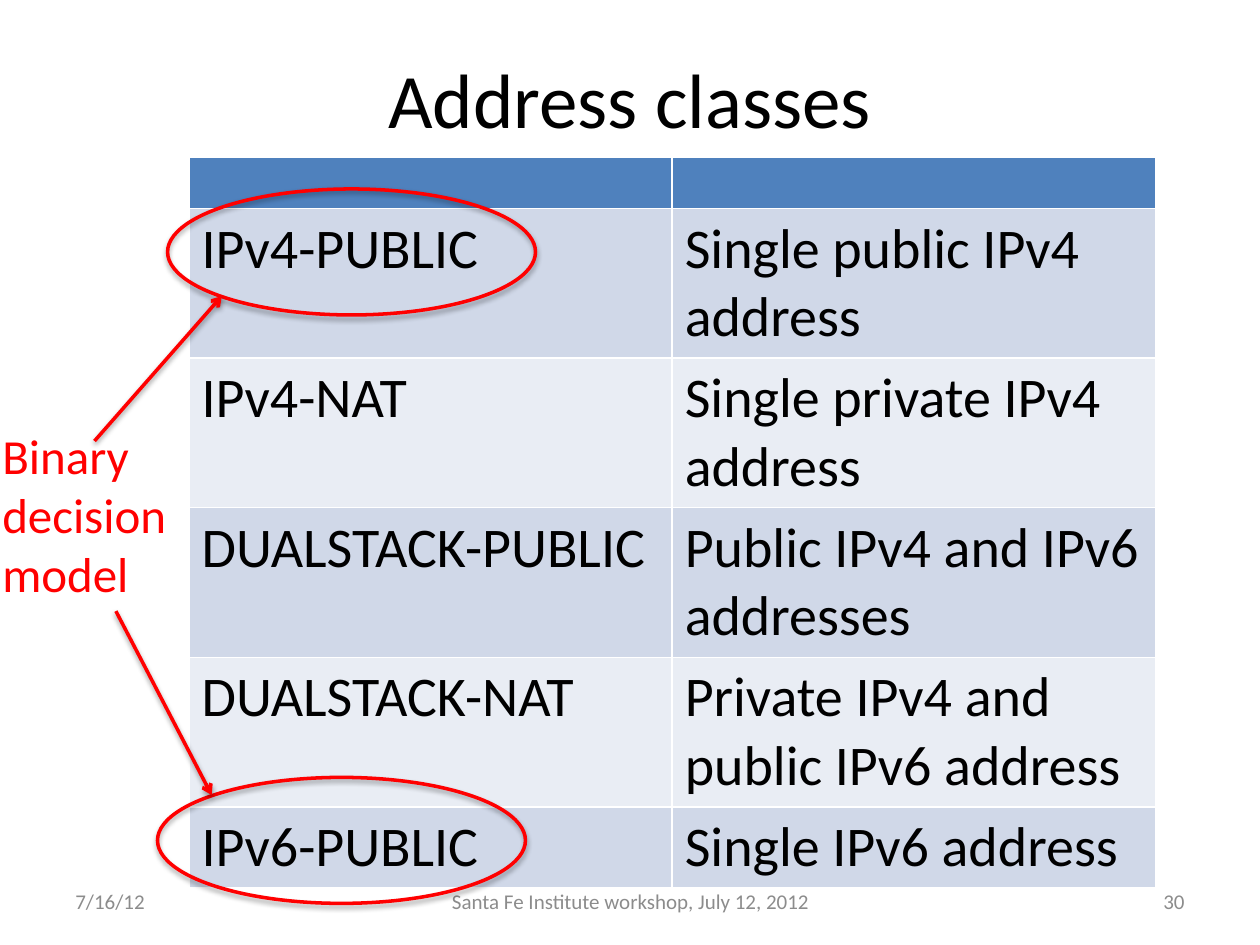
import pptx
import pptx.util
import pptx.dml.color
import pptx.enum.shapes
import pptx.enum.text
import pptx.oxml
import pptx.oxml.ns

Inches, Pt = pptx.util.Inches, pptx.util.Pt
Align, Anchor = pptx.enum.text.PP_ALIGN, pptx.enum.text.MSO_ANCHOR
FONT, RED, GREY, BLACK = "Calibri", "FF0000", "8C8C8C", "000000"
HEAD, BANDS = "4F81BD", ("D0D8E8", "E9EDF4")
ROWS = [
    ("IPv4-PUBLIC", "Single public IPv4 address"),
    ("IPv4-NAT", "Single private IPv4 address"),
    ("DUALSTACK-PUBLIC", "Public IPv4 and IPv6 addresses"),
    ("DUALSTACK-NAT", "Private IPv4 and public IPv6 address"),
    ("IPv6-PUBLIC", "Single IPv6 address"),
]
HEIGHTS = [0.4] + [0.95] * 4 + [0.52]


def color(code):
    return pptx.dml.color.RGBColor.from_string(code)


def place(box):
    return [Inches(n) for n in box]


def write(frame, text, size, code, align=None):
    frame.text = text
    para = frame.paragraphs[0]
    para.alignment = align
    font = para.runs[0].font
    font.name, font.size = FONT, Pt(size)
    font.color.rgb = color(code)


def add_text(slide, box, text, size, code, align=None, anchor=Anchor.TOP):
    frame = slide.shapes.add_textbox(*place(box)).text_frame
    frame.word_wrap = True
    frame.vertical_anchor = anchor
    write(frame, text, size, code, align)


def add_title(slide, box, text):
    title = slide.shapes.title
    title.left, title.top, title.width, title.height = place(box)
    title.text_frame.vertical_anchor = Anchor.MIDDLE
    write(title.text_frame, text, 44, BLACK, Align.CENTER)


def add_grid(slide, box):
    # White rules come from the default table style
    grid = slide.shapes.add_table(len(HEIGHTS), 2, *place(box)).table
    for row, height in zip(grid.rows, HEIGHTS):
        row.height = Inches(height)
    for r, texts in enumerate([("", "")] + ROWS):
        for c, text in enumerate(texts):
            cell = grid.cell(r, c)
            cell.fill.solid()
            cell.fill.fore_color.rgb = color(BANDS[(r - 1) % 2] if r else HEAD)
            if text:
                write(cell.text_frame, text, 32, BLACK)


def add_mark(shape, alpha, dist):
    """Red outline with a soft shadow below."""
    shape.line.color.rgb = color(RED)
    shape.line.width = Pt(2)
    shape._element.spPr.append(pptx.oxml.parse_xml(
        f'<a:effectLst {pptx.oxml.ns.nsdecls("a")}>'
        f'<a:outerShdw blurRad="{Pt(3.1)}" dist="{Pt(dist)}" dir="5400000" rotWithShape="0">'
        f'<a:srgbClr val="{BLACK}"><a:alpha val="{alpha * 1000}"/></a:srgbClr>'
        '</a:outerShdw></a:effectLst>'))


def add_ring(slide, box):
    kind = pptx.enum.shapes.MSO_SHAPE.OVAL
    ring = slide.shapes.add_shape(kind, *place(box))
    ring.fill.background()
    add_mark(ring, 35, 1.8)


def add_arrow(slide, start, end):
    kind = pptx.enum.shapes.MSO_CONNECTOR.STRAIGHT
    arrow = slide.shapes.add_connector(kind, *place(start + end))
    add_mark(arrow, 38, 1.6)
    arrow.line._get_or_add_ln().append(pptx.oxml.parse_xml(
        f'<a:tailEnd {pptx.oxml.ns.nsdecls("a")} type="arrow"/>'))


def add_notes(slide, box):
    # Label with one arrow to each ringed class
    add_ring(slide, (1.33, 1.5, 2.92, 1))
    add_ring(slide, (1.25, 6.17, 2.92, 1))
    add_arrow(slide, (0.75, 3.5), (1.76, 2.35))
    add_arrow(slide, (0.92, 4.85), (1.68, 6.31))
    add_text(slide, box, "Binary decision model", 28, RED)


def add_footer(slide, top, height):
    parts = [
        (0.5, 2.33, "7/16/12", Align.LEFT),
        (3.42, 3.17, "Santa Fe Institute workshop, July 12, 2012", Align.CENTER),
        (7.17, 2.33, "30", Align.RIGHT),
    ]
    for left, width, text, align in parts:
        add_text(slide, (left, top, width, height), text, 12, GREY, align, Anchor.MIDDLE)


def main():
    deck = pptx.Presentation()
    deck.slide_width, deck.slide_height = Inches(10), Inches(7.5)
    slide = deck.slides.add_slide(deck.slide_layouts[5])
    add_title(slide, (0.5, 0.25, 9, 1.05), "Address classes")
    add_grid(slide, (1.5, 1.25, 7.67, 4.72))
    add_footer(slide, 6.95, 0.4)
    add_notes(slide, (-0.08, 3.33, 2, 1.51))
    deck.save("out.pptx")


if __name__ == "__main__":
    main()
